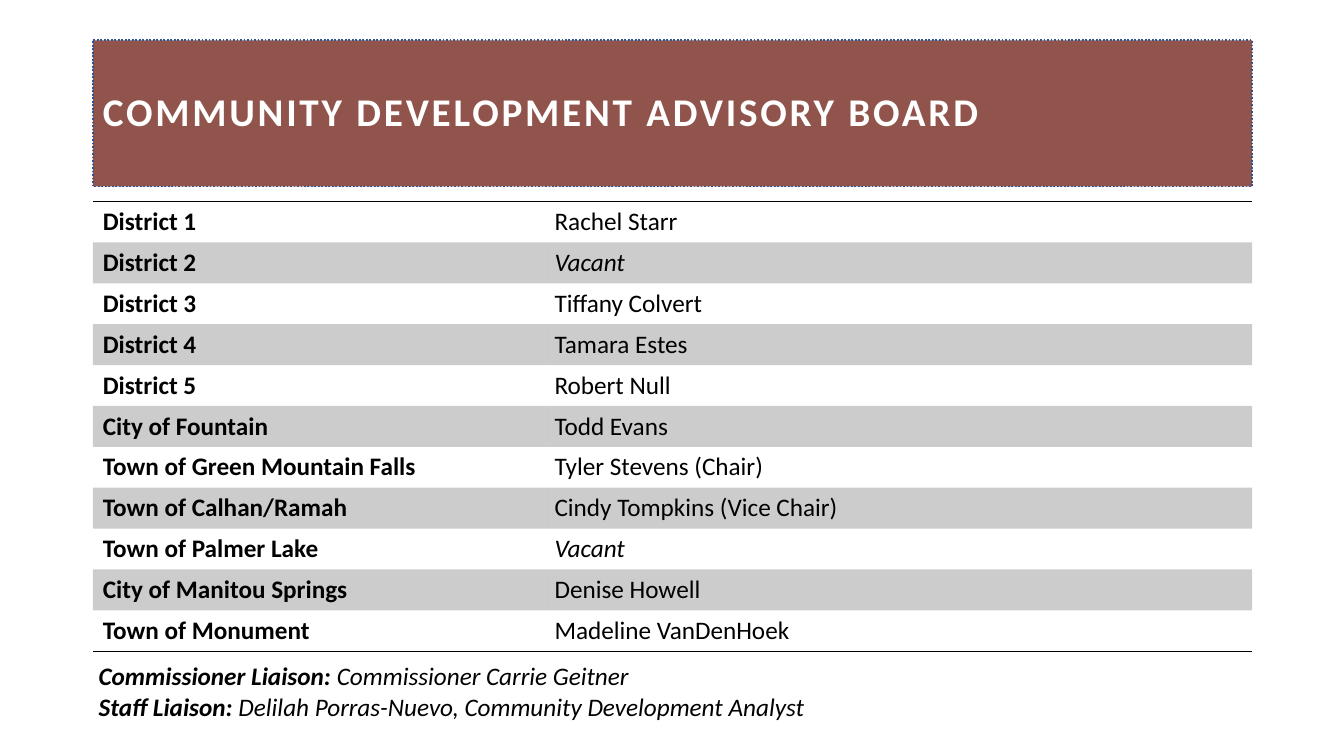
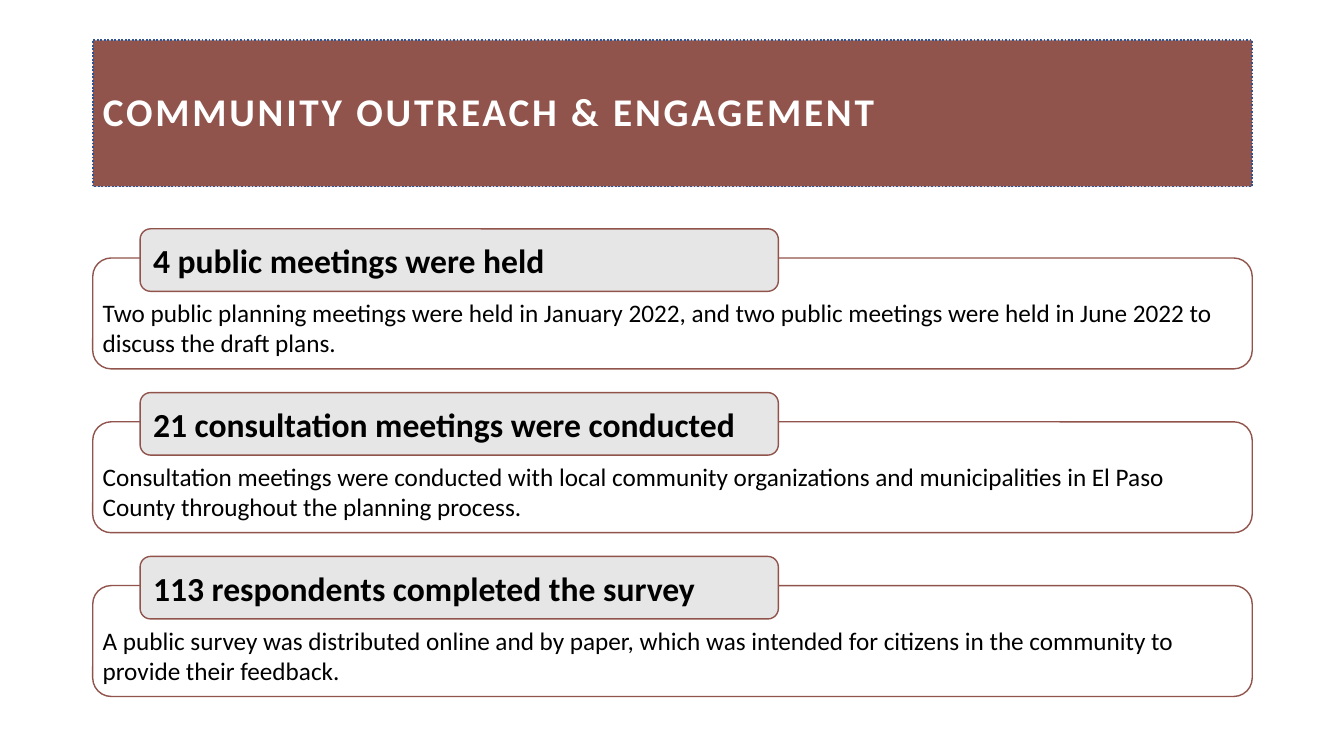
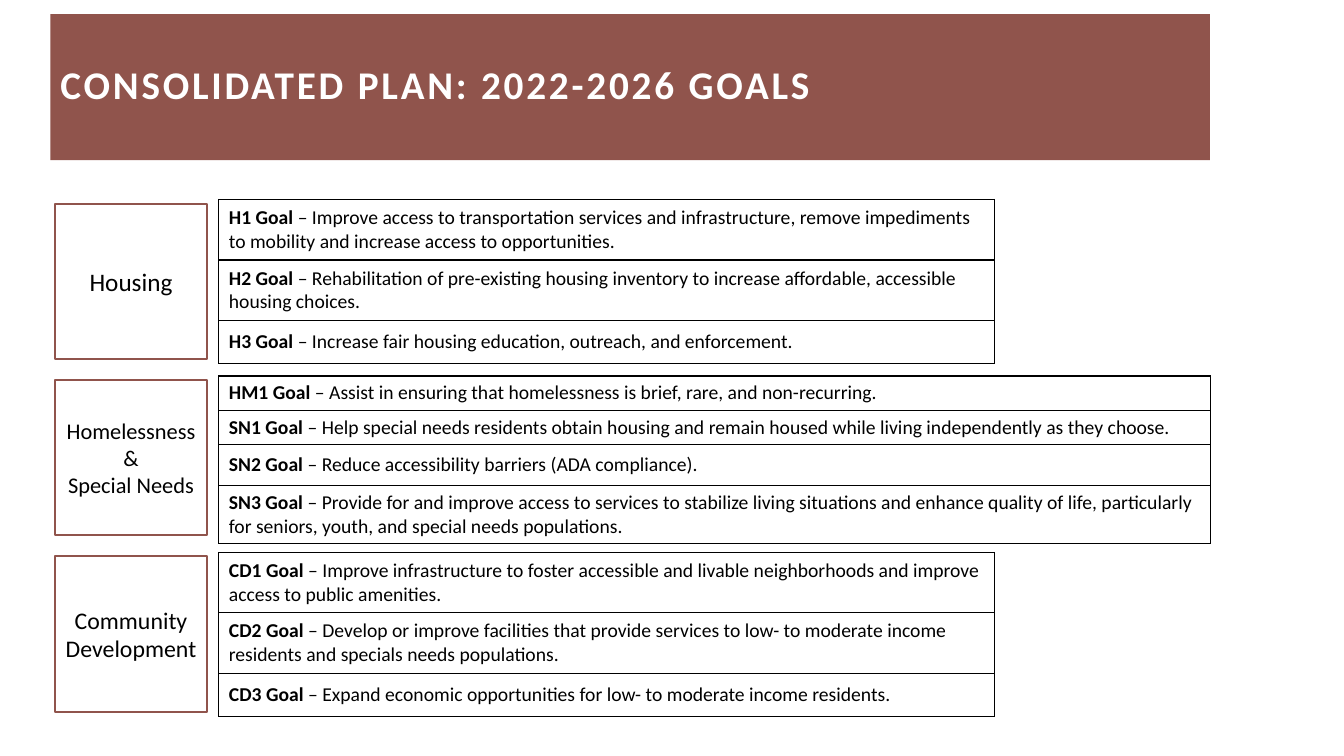
"""Build three slides on the community development board, outreach and plan goals."""
from lxml import etree
from pptx import Presentation
from pptx import util as u
from pptx.dml.color import RGBColor
from pptx.enum import dml, shapes, text
from pptx.oxml.ns import qn

COLOURS = {"brick": "90544C", "navy": "325491", "black": "000000",
           "white": "FFFFFF", "mist": "E7E6E6"}
FONT = "Calibri"
NO_GRID_STYLE = "{2D5ABB26-0587-4C30-8999-92F81FD0307C}"
BAND_LEFT, BAND_TOP, BAND_WIDTH, BAND_HEIGHT = 0.92, 0.4, 11.5, 1.45
BOLD, PLAIN, ITALIC = {"bold": True}, {"bold": False}, {"italic": True}
BOLD_ITALIC = {"bold": True, "italic": True}

BOARD_TITLE = "COMMUNITY DEVELOPMENT ADVISORY BOARD"
MEMBERS = [
    ("District 1", "Rachel Starr"),
    ("District 2", "Vacant"),
    ("District 3", "Tiffany Colvert"),
    ("District 4", "Tamara Estes"),
    ("District 5", "Robert Null"),
    ("City of Fountain", "Todd Evans"),
    ("Town of Green Mountain Falls", "Tyler Stevens (Chair)"),
    ("Town of Calhan/Ramah", "Cindy Tompkins (Vice Chair)"),
    ("Town of Palmer Lake", "Vacant"),
    ("City of Manitou Springs", "Denise Howell"),
    ("Town of Monument", "Madeline VanDenHoek"),
]
LIAISONS = [
    ("Commissioner Liaison: ", "Commissioner Carrie Geitner"),
    ("Staff Liaison: ", "Delilah Porras-Nuevo, Community Development Analyst"),
]

OUTREACH_TITLE = "COMMUNITY OUTREACH & ENGAGEMENT"
ACTIVITIES = [
    ("4 public meetings were held",
     "Two public planning meetings were held in January 2022, and two public "
     "meetings were held in June 2022 to discuss the draft plans."),
    ("21 consultation meetings were conducted",
     "Consultation meetings were conducted with local community organizations and "
     "municipalities in El Paso County throughout the planning process."),
    ("113 respondents completed the survey",
     "A public survey was distributed online and by paper, which was intended for "
     "citizens in the community to provide their feedback."),
]

GOALS_TITLE = "CONSOLIDATED PLAN: 2022-2026 GOALS"
GOAL_GROUPS = [
    {"label": ["Housing"], "size": 18, "width": 7.69, "heights": [0.6, 0.6, 0.43],
     "goals": [
         ("H1", "Improve access to transportation services and infrastructure, remove "
                "impediments to mobility and increase access to opportunities."),
         ("H2", "Rehabilitation of pre-existing housing inventory to increase "
                "affordable, accessible housing choices."),
         ("H3", "Increase fair housing education, outreach, and enforcement.")]},
    {"label": ["Homelessness", "&", "Special Needs"], "size": 16, "width": 9.84,
     "heights": [0.34, 0.34, 0.41, 0.57],
     "goals": [
         ("HM1", "Assist in ensuring that homelessness is brief, rare, and "
                 "non-recurring."),
         ("SN1", "Help special needs residents obtain housing and remain housed while "
                 "living independently as they choose."),
         ("SN2", "Reduce accessibility barriers (ADA compliance)."),
         ("SN3", "Provide for and improve access to services to stabilize living "
                 "situations and enhance quality of life, particularly for seniors, "
                 "youth, and special needs populations.")]},
    {"label": ["Community", "Development"], "size": 17, "width": 7.69,
     "heights": [0.6, 0.6, 0.43],
     "goals": [
         ("CD1", "Improve infrastructure to foster accessible and livable "
                 "neighborhoods and improve access to public amenities."),
         ("CD2", "Develop or improve facilities that provide services to low- to "
                 "moderate income residents and specials needs populations."),
         ("CD3", "Expand economic opportunities for low- to moderate income "
                 "residents.")]},
]


def rgb(name):
    """Return the named colour."""
    return RGBColor.from_string(COLOURS[name])


def apply(target, values):
    """Set each attribute of the target from a dict."""
    for name, value in values.items():
        setattr(target, name, value)


def inches(*lengths):
    """Turn plain numbers into lengths."""
    return [u.Inches(length) for length in lengths]


def write(frame, paragraphs, size, colour="black", **layout):
    """Write paragraphs, each a list of (wording, font values) runs."""
    frame.word_wrap = True
    for index, runs in enumerate(paragraphs):
        paragraph = frame.paragraphs[0] if index == 0 else frame.add_paragraph()
        apply(paragraph, {"alignment": text.PP_ALIGN.LEFT, **layout})
        for wording, values in runs:
            run = paragraph.add_run()
            run.text = wording
            apply(run.font, {"name": FONT, "size": u.Pt(size), **values})
            run.font.color.rgb = rgb(colour)


def paint(shape, fill, line=None, width=1):
    """Give a shape a solid fill and an outline."""
    shape.fill.solid()
    shape.fill.fore_color.rgb = rgb(fill)
    if line:
        shape.line.color.rgb = rgb(line)
        shape.line.width = u.Pt(width)


def add_box(slide, kind, place, fill, line, width=1):
    """Add a flat preset shape."""
    box = slide.shapes.add_shape(kind, *inches(*place))
    box.shadow.inherit = False
    paint(box, fill, line, width)
    box.text_frame.vertical_anchor = text.MSO_ANCHOR.MIDDLE
    return box


def add_titled_slide(deck, title, left=BAND_LEFT, top=BAND_TOP, outlined=True):
    """Add a slide with the title band."""
    slide = deck.slides.add_slide(deck.slide_layouts[5])
    band = slide.shapes.title
    place = inches(left, top, BAND_WIDTH, BAND_HEIGHT)
    apply(band, dict(zip(("left", "top", "width", "height"), place)))
    paint(band, "brick", "navy" if outlined else None, 1.25)
    if outlined:
        band.line.dash_style = dml.MSO_LINE.ROUND_DOT
    apply(band.text_frame, {"vertical_anchor": text.MSO_ANCHOR.MIDDLE,
                            "auto_size": text.MSO_AUTO_SIZE.NONE})
    write(band.text_frame, [[(title, BOLD)]], 28, "white", line_spacing=0.9)
    for run in band.text_frame.paragraphs[0].runs:
        run.font._element.set("spc", "200")
    return slide


def add_plain_table(slide, left, top, widths, heights):
    """Add a table without style bands or grid."""
    place = inches(left, top, sum(widths), sum(heights))
    table = slide.shapes.add_table(len(heights), len(widths), *place).table
    apply(table, {"first_row": False, "horz_banding": False})
    table._tbl.tblPr.find(qn("a:tableStyleId")).text = NO_GRID_STYLE
    for column, width in zip(table.columns, widths):
        column.width = u.Inches(width)
    for row, height in zip(table.rows, heights):
        row.height = u.Inches(height)
    return table


def add_borders(cell, sides):
    """Draw black one-point borders on the sides, given in the order L, R, T, B."""
    properties = cell._tc.get_or_add_tcPr()
    for index, side in enumerate(sides):
        border = etree.Element(qn(f"a:ln{side}"), w=str(u.Pt(1)))
        solid = etree.SubElement(border, qn("a:solidFill"))
        etree.SubElement(solid, qn("a:srgbClr"), val=COLOURS["black"])
        properties.insert(index, border)


def build_board(deck):
    """Build the list of board members."""
    slide = add_titled_slide(deck, BOARD_TITLE)
    table = add_plain_table(slide, BAND_LEFT, 2, [4.48, 7.02], [0.4] * len(MEMBERS))
    edges = {0: "T", len(MEMBERS) - 1: "B"}
    for row, (seat, member) in enumerate(MEMBERS):
        member_font = ITALIC if member == "Vacant" else PLAIN
        for column, run in enumerate([(seat, BOLD), (member, member_font)]):
            cell = table.cell(row, column)
            write(cell.text_frame, [[run]], 18)
            if row % 2:
                paint_tint(cell)
            else:
                cell.fill.background()
            add_borders(cell, edges.get(row, ""))
    liaisons = slide.shapes.add_textbox(*inches(0.63, 6.56, 11.79, 0.69)).text_frame
    write(liaisons, [[(role, BOLD_ITALIC), (person, ITALIC)] for role, person in LIAISONS],
          18, line_spacing=0.8, space_before=u.Pt(5))
    for paragraph in liaisons.paragraphs:
        paragraph._p.get_or_add_pPr().set("marL", str(u.Inches(0.25)))


def paint_tint(cell):
    """Fill a cell with black at 20 percent."""
    cell.fill.solid()
    cell.fill.fore_color.rgb = rgb("black")
    colour = cell._tc.tcPr.find(qn("a:solidFill")).find(qn("a:srgbClr"))
    etree.SubElement(colour, qn("a:alpha"), val="20000")


def build_outreach(deck):
    """Build the outreach activities."""
    slide = add_titled_slide(deck, OUTREACH_TITLE)
    rounded = shapes.MSO_SHAPE.ROUNDED_RECTANGLE
    for index, (heading, detail) in enumerate(ACTIVITIES):
        top = 2.56 + 1.625 * index
        add_box(slide, rounded, (BAND_LEFT, top, BAND_WIDTH, 1.1), "white", "brick")
        tab = add_box(slide, rounded, (1.39, top - 0.29, 6.33, 0.62), "mist", "brick")
        write(tab.text_frame, [[(heading, BOLD)]], 24)
        place = inches(BAND_LEFT, top + 0.34, BAND_WIDTH, 0.71)
        description = slide.shapes.add_textbox(*place).text_frame
        description.auto_size = text.MSO_AUTO_SIZE.SHAPE_TO_FIT_TEXT
        write(description, [[(detail, PLAIN)]], 18)


def build_goals(deck):
    """Build the goals by group."""
    slide = add_titled_slide(deck, GOALS_TITLE, 0.5, 0.14, outlined=False)
    for index, group in enumerate(GOAL_GROUPS):
        top = 1.98 + 1.75 * index
        table = add_plain_table(slide, 2.17, top, [group["width"]], group["heights"])
        for row, (code, goal) in enumerate(group["goals"]):
            cell = table.cell(row, 0)
            cell.vertical_anchor = text.MSO_ANCHOR.MIDDLE
            write(cell.text_frame, [[(f"{code} Goal ", BOLD), (f"– {goal}", PLAIN)]], 14)
            cell.fill.solid()
            cell.fill.fore_color.rgb = rgb("white")
            add_borders(cell, "LRTB")
        label = add_box(slide, shapes.MSO_SHAPE.RECTANGLE, (0.55, top + 0.04, 1.5, 1.54),
                        "white", "brick", 1.5).text_frame
        apply(label, {"margin_left": u.Inches(0.05), "margin_right": u.Inches(0.05)})
        write(label, [[(line, PLAIN)] for line in group["label"]], group["size"],
              alignment=text.PP_ALIGN.CENTER)


def main():
    """Build and save the slides."""
    deck = Presentation()
    apply(deck, {"slide_width": u.Inches(13.33), "slide_height": u.Inches(7.5)})
    for build in (build_board, build_outreach, build_goals):
        build(deck)
    deck.save("out.pptx")


if __name__ == "__main__":
    main()
